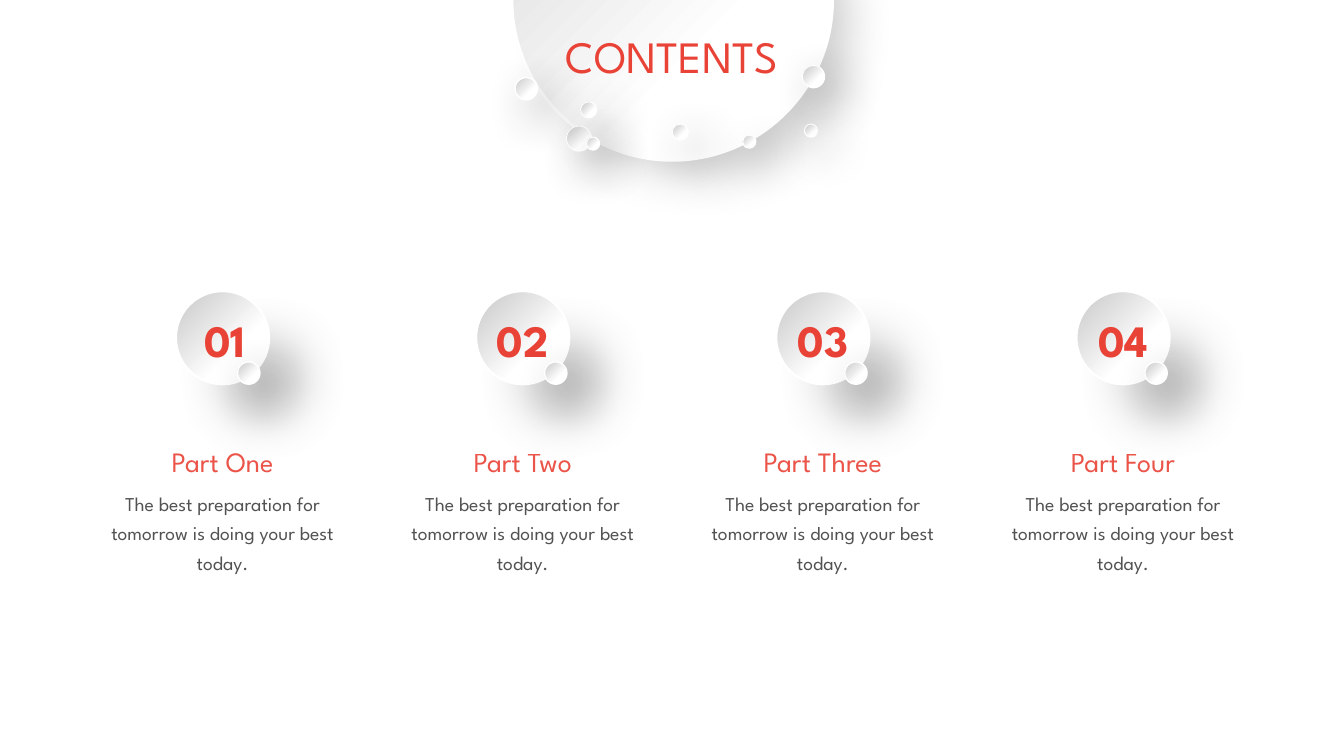
from dataclasses import dataclass

from pptx import Presentation
from pptx.dml.color import RGBColor
from pptx.enum.shapes import MSO_SHAPE
from pptx.enum.text import MSO_ANCHOR, MSO_AUTO_SIZE, PP_ALIGN
from pptx.oxml import parse_xml
from pptx.oxml.ns import nsdecls, qn
from pptx.util import Pt

OVAL = MSO_SHAPE.OVAL
TOP = MSO_ANCHOR.TOP
GROW = MSO_AUTO_SIZE.SHAPE_TO_FIT_TEXT
CENTER = PP_ALIGN.CENTER

FONT = "League Spartan"
COLORS = {
    "white": "FFFFFF",
    "red": "E94236",
    "body": "404040",
    "pale_shade": "D9D9D9",
    "shade": "C7C7C7",
    "soft_shadow": "808080",
    "hard_shadow": "000000",
}
BODY_TEXT = "The best preparation for tomorrow is doing your best today."
FIRST_CENTER = 159
COLUMN_PITCH = 214.4
ARC_HANDLE = 0.55  # handle length of a quarter circle, as a share of its radius


@dataclass(frozen=True)
class Shadow:
    color: str
    opacity: int
    blur: float
    distance: float
    scale: int = 100


@dataclass(frozen=True)
class Bubble:
    left: float
    top: float
    diameter: float
    line_width: float = 0.75


@dataclass(frozen=True)
class Part:
    number: str
    label: str
    label_width: float = 105
    number_shift: float = 0
    dot_shift: float = 23.6


DISC_SHADOW = Shadow("soft_shadow", 40, 33, 45, scale=90)
DOT_SHADOW = Shadow("hard_shadow", 45, 33, 15)

BUBBLES = [
    Bubble(404.6, 90, 18),
    Bubble(480.2, 88.6, 11.5),
    Bubble(414.7, 72.7, 11.5),
    Bubble(367.9, 55.4, 16, 1),
    Bubble(574.6, 88.6, 9.4),
    Bubble(573.1, 46.8, 16),
    Bubble(419, 97.9, 9.4),
    Bubble(530.6, 96.5, 9.4),
]
PARTS = [
    Part("01", "Part One", number_shift=1.5, dot_shift=18.7),
    Part("02", "Part Two"),
    Part("03", "Part Three", label_width=145),
    Part("04", "Part Four"),
]


def style_relief(shape, line_width: float, shadow: Shadow, shade: str = "shade") -> None:
    """Give a shape the diagonal white-to-grey gradient, white rim and cast shadow."""
    shape.fill.gradient()
    gradient = shape.element.spPr.find(qn("a:gradFill"))
    stops = "".join(
        f'<a:gs pos="{position * 1000}"><a:srgbClr val="{COLORS[name]}"/></a:gs>'
        for position, name in ((0, "white"), (36, "white"), (100, shade))
    )
    gradient.getparent().replace(gradient, parse_xml(
        f'<a:gradFill {nsdecls("a")} rotWithShape="1"><a:gsLst>{stops}</a:gsLst>'
        '<a:lin ang="13500000" scaled="0"/></a:gradFill>'
    ))
    shape.line.color.rgb = RGBColor.from_string(COLORS["white"])
    shape.line.width = Pt(line_width)
    shape.shadow.inherit = False
    scale = shadow.scale * 1000
    shape.element.spPr.find(qn("a:effectLst")).append(parse_xml(
        f'<a:outerShdw {nsdecls("a")} blurRad="{Pt(shadow.blur)}" '
        f'dist="{Pt(shadow.distance)}" dir="2700000" sx="{scale}" sy="{scale}" '
        f'algn="tl" rotWithShape="0"><a:srgbClr val="{COLORS[shadow.color]}">'
        f'<a:alpha val="{shadow.opacity * 1000}"/></a:srgbClr></a:outerShdw>'
    ))


def add_disc(shapes, bubble: Bubble, shadow: Shadow) -> None:
    disc = shapes.add_shape(
        OVAL, Pt(bubble.left), Pt(bubble.top), Pt(bubble.diameter), Pt(bubble.diameter)
    )
    style_relief(disc, bubble.line_width, shadow)


def add_header_disc(shapes):
    """Draw two half circles joined by short straight sides."""
    radius, center_x, upper_y, lower_y = 114.5, 480.2, -3.6, 0
    left, right = center_x - radius, center_x + radius
    points = [
        (Pt(x), Pt(y)) for x, y in (
            (center_x, upper_y - radius), (right, upper_y), (right, lower_y),
            (center_x, lower_y + radius), (left, lower_y), (left, upper_y),
            (center_x, upper_y - radius),
        )
    ]
    builder = shapes.build_freeform(*points[0])
    builder.add_line_segments(points[1:], close=True)
    disc = builder.convert_to_shape()
    segments = list(disc.element.iter(qn("a:lnTo")))
    for segment, start, end in zip(segments, points, points[1:]):
        if start[0] == end[0]:
            continue
        pole, side = (start, end) if start[0] == points[0][0] else (end, start)
        corner = (side[0], pole[1])
        handles = [
            [knot[axis] + ARC_HANDLE * (corner[axis] - knot[axis]) for axis in (0, 1)]
            for knot in (start, end)
        ]
        curve_points = "".join(
            f'<a:pt x="{round(x - disc.left)}" y="{round(y - disc.top)}"/>'
            for x, y in (*handles, end)
        )
        segment.getparent().replace(segment, parse_xml(
            f'<a:cubicBezTo {nsdecls("a")}>{curve_points}</a:cubicBezTo>'
        ))
    style_relief(disc, 2, DISC_SHADOW, "pale_shade")
    return disc


def write_text(shape, text: str, *, center: float, top: float, width: float,
               height: float, size: float, color: str = "red", bold: bool = False,
               opacity: int = 100, line_spacing: float = 1.0) -> None:
    shape.left, shape.top = Pt(center - width / 2), Pt(top)
    shape.width, shape.height = Pt(width), Pt(height)
    frame = shape.text_frame
    frame.word_wrap = True
    frame.auto_size = GROW
    frame.vertical_anchor = TOP
    paragraph = frame.paragraphs[0]
    paragraph.alignment = CENTER
    paragraph.line_spacing = line_spacing
    run = paragraph.add_run()
    run.text = text
    run.font.name = FONT
    run.font.size = Pt(size)
    run.font.bold = bold
    run.font.color.rgb = RGBColor.from_string(COLORS[color])
    if opacity < 100:
        for color_element in shape.element.iter(qn("a:srgbClr")):
            color_element.append(parse_xml(
                f'<a:alpha {nsdecls("a")} val="{opacity * 1000}"/>'
            ))


def add_text(shapes, text: str, **text_format) -> None:
    write_text(shapes.add_textbox(0, 0, 0, 0), text, **text_format)


def add_part(shapes, part: Part, center: float) -> None:
    add_disc(shapes, Bubble(center - 33.25, 208, 66.5, 1.5), DISC_SHADOW)
    add_text(shapes, part.label, center=center, top=314, width=part.label_width,
             height=31.5, size=20, opacity=90)
    add_text(shapes, BODY_TEXT, center=center, top=343.6, width=176.5, height=70.5,
             size=14, color="body", opacity=90, line_spacing=1.25)
    add_text(shapes, part.number, center=center + part.number_shift, top=219.6,
             width=63.4, height=46, size=32, bold=True)
    add_disc(shapes, Bubble(center + part.dot_shift - 8, 258.5, 16, 1), DOT_SHADOW)


def main() -> None:
    presentation = Presentation()
    presentation.slide_width, presentation.slide_height = Pt(960), Pt(540)
    slide = presentation.slides.add_slide(presentation.slide_layouts[5])
    shapes = slide.shapes

    header_disc = add_header_disc(shapes)
    title = shapes.title
    title.element.addprevious(header_disc.element)
    write_text(title, "CONTENTS", center=480, top=16.6, width=208, height=46, size=32)

    bubble_group = shapes.add_group_shape()
    for bubble in BUBBLES:
        add_disc(bubble_group.shapes, bubble, DOT_SHADOW)

    for index, part in enumerate(PARTS):
        add_part(shapes, part, FIRST_CENTER + index * COLUMN_PITCH)

    presentation.save("out.pptx")


if __name__ == "__main__":
    main()
